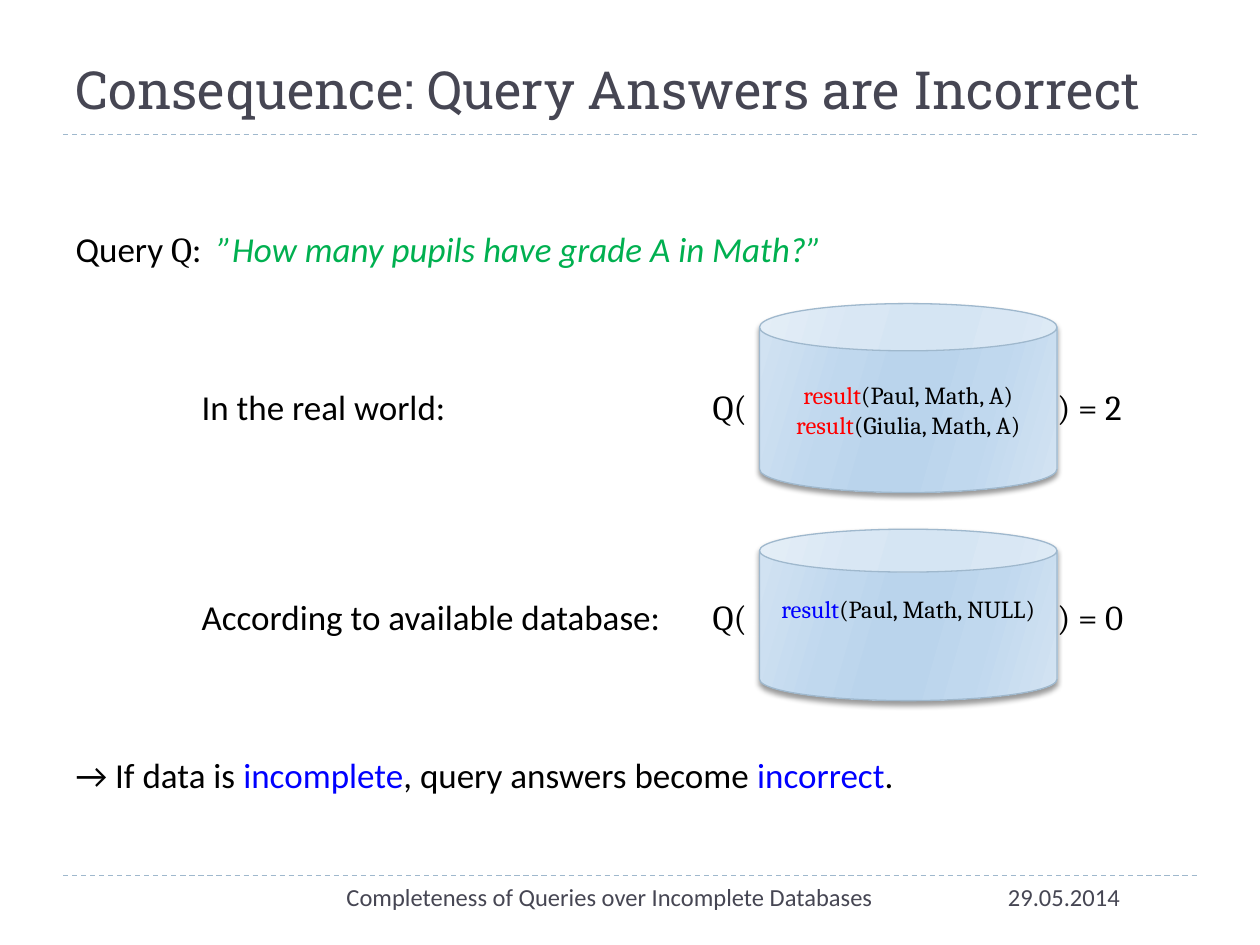
from lxml import etree
from pptx import Presentation
from pptx.dml.color import RGBColor
from pptx.enum.dml import MSO_LINE
from pptx.enum.shapes import MSO_CONNECTOR, MSO_SHAPE
from pptx.enum.text import MSO_ANCHOR, PP_ALIGN
from pptx.oxml import parse_xml
from pptx.oxml.ns import nsdecls, qn
from pptx.util import Pt

BLACK, RED, BLUE, GREEN = "000000", "FF0000", "0000FF", "00B050"
SLATE, STEEL = "464653", "9FB8CD"
CAN_STOPS = [(0, "D3E3F2"), (30, "C0D8EE"), (45, "BAD4EC"),
             (55, "BAD4EC"), (73, "C0D8EE"), (100, "D3E3F2")]


def color(hex_value):
    return RGBColor.from_string(hex_value)


def write(paragraph, runs, size, font="Calibri"):
    """Fill a paragraph with (text, colour) pairs in one font."""
    paragraph.font.size = Pt(size)
    paragraph.font.name = font
    for words, hex_value in runs:
        run = paragraph.add_run()
        run.text = words
        run.font.color.rgb = color(hex_value)


def add_line_of_text(slide, left, top, width, runs, size=20, font="Calibri",
                     align=PP_ALIGN.LEFT):
    box = slide.shapes.add_textbox(Pt(left), Pt(top), Pt(width), Pt(size * 1.5))
    frame = box.text_frame
    frame.word_wrap = True
    frame.margin_left = frame.margin_right = frame.margin_top = frame.margin_bottom = 0
    paragraph = frame.paragraphs[0]
    paragraph.alignment = align
    write(paragraph, runs, size, font)
    return paragraph


def add_rule(slide, left, top, width):
    rule = slide.shapes.add_connector(
        MSO_CONNECTOR.STRAIGHT, Pt(left), Pt(top), Pt(left + width), Pt(top))
    rule.line.color.rgb = color(STEEL)
    rule.line.width = Pt(0.75)
    rule.line.dash_style = MSO_LINE.DASH
    etree.SubElement(rule._element.spPr, qn("a:effectLst"))


def add_title(slide, left, top, width, height, words):
    title = slide.shapes.title
    title.left, title.top, title.width, title.height = map(Pt, (left, top, width, height))
    frame = title.text_frame
    frame.vertical_anchor = MSO_ANCHOR.BOTTOM
    frame.word_wrap = True
    paragraph = frame.paragraphs[0]
    paragraph.alignment = PP_ALIGN.LEFT
    write(paragraph, [(words, SLATE)], 30, "Roboto Slab")


def style_can(can):
    """Give the database its glossy gradient and soft shadow."""
    can.line.color.rgb = color(STEEL)
    can.line.width = Pt(0.75)
    can.fill.background()
    stops = "".join(f'<a:gs pos="{share * 1000}"><a:srgbClr val="{hex_value}"/></a:gs>'
                    for share, hex_value in CAN_STOPS)
    gradient = parse_xml(
        f'<a:gradFill {nsdecls("a")} rotWithShape="1"><a:gsLst>{stops}</a:gsLst>'
        '<a:lin ang="960000" scaled="0"/></a:gradFill>')
    properties = can._element.spPr
    properties.replace(properties.find(qn("a:noFill")), gradient)
    properties.append(parse_xml(
        f'<a:effectLst {nsdecls("a")}><a:outerShdw blurRad="{Pt(3)}" dist="{Pt(2)}" '
        'dir="5400000" rotWithShape="0"><a:srgbClr val="000000">'
        '<a:alpha val="40000"/></a:srgbClr></a:outerShdw></a:effectLst>'))


def add_database(slide, left, top, width, height, facts, fact_color, lift):
    """Draw a can of facts, its text raised by a bottom inset of lift."""
    can = slide.shapes.add_shape(MSO_SHAPE.CAN, Pt(left), Pt(top), Pt(width), Pt(height))
    style_can(can)
    frame = can.text_frame
    frame.word_wrap = True
    frame.vertical_anchor = MSO_ANCHOR.MIDDLE
    frame.margin_bottom = Pt(3.6 + lift)
    for index, arguments in enumerate(facts):
        paragraph = frame.add_paragraph() if index else frame.paragraphs[0]
        paragraph.alignment = PP_ALIGN.CENTER
        write(paragraph, [("result", fact_color), (arguments, BLACK)], 14, "Cambria")


def add_evaluation(slide, left, top, height, baseline_top, label, facts,
                   fact_color, answer, lift=0):
    """Show a label and Q(database) = answer, with the text at baseline_top."""
    can_left, can_width = left + 318.8, 170
    text_top = top + baseline_top
    add_line_of_text(slide, left, text_top, 280, [(label, BLACK)])
    add_line_of_text(slide, left + 292, text_top, 27, [("Q(", BLACK)], font="Cambria")
    add_line_of_text(slide, can_left + can_width, text_top, 60,
                     [(f") = {answer}", BLACK)], font="Cambria")
    add_database(slide, can_left, top, can_width, height, facts, fact_color, lift)


def add_query(slide, left, top, width):
    paragraph = add_line_of_text(slide, left, top, width, [
        ("Query ", BLACK), ("Q", BLACK), (":  ", BLACK),
        ("”How many pupils have grade A in Math?”", GREEN)])
    paragraph.runs[1].font.name = "Cambria"
    paragraph.runs[3].font.italic = True


def add_footer(slide, left, top, width):
    add_rule(slide, left, top, width)
    add_line_of_text(slide, left + 125.2, top + 3.6, 374.4,
                     [("Completeness of Queries over Incomplete Databases", SLATE)],
                     14, align=PP_ALIGN.CENTER)
    add_line_of_text(slide, left + 540, top + 3.6, 128, [("29.05.2014", SLATE)], 14)


def main():
    presentation = Presentation()
    presentation.slide_width, presentation.slide_height = Pt(720), Pt(540)
    slide = presentation.slides.add_slide(presentation.slide_layouts[5])
    margin, content_width = 36, 648
    text_left = margin + 7.2

    add_title(slide, margin, 12.2, 669.6, 59.8, "Consequence: Query Answers are Incorrect")
    add_rule(slide, margin, 77, content_width)
    add_query(slide, text_left, 130, 634)
    add_evaluation(slide, text_left + 72, 173.5, 108, 46.9, "In the real world:",
                   ["(Paul, Math, A)", "(Giulia, Math, A)"], RED, 2)
    add_evaluation(slide, text_left + 72, 302.4, 98, 38, "According to available database:",
                   ["(Paul, Math, NULL)"], BLUE, 0, lift=19)
    add_line_of_text(slide, text_left, 430.6, 634, [
        ("→ If data is ", BLACK), ("incomplete", BLUE),
        (", query answers become ", BLACK), ("incorrect", BLUE), (".", BLACK)])
    add_footer(slide, margin, 500.4, content_width)
    presentation.save("out.pptx")


if __name__ == "__main__":
    main()
